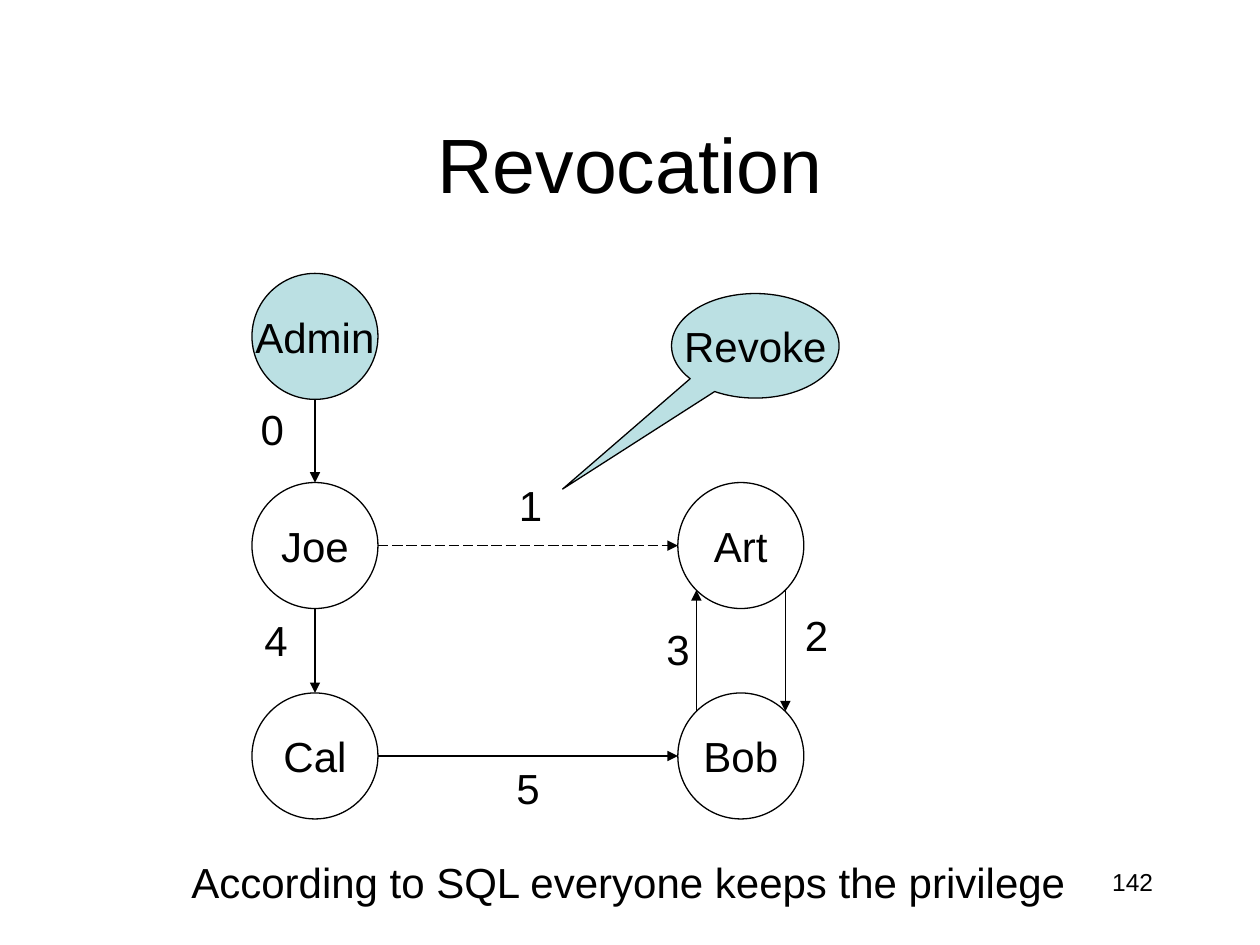
import math
from dataclasses import dataclass
from typing import Optional

from lxml import etree
from pptx import Presentation
from pptx.dml.color import RGBColor
from pptx.enum.dml import MSO_LINE
from pptx.enum.shapes import MSO_CONNECTOR, MSO_SHAPE
from pptx.enum.text import MSO_ANCHOR, MSO_AUTO_SIZE, PP_ALIGN
from pptx.oxml.ns import qn
from pptx.util import Inches, Pt

LONG_DASH = MSO_LINE.LONG_DASH
STRAIGHT = MSO_CONNECTOR.STRAIGHT
ELLIPSE = MSO_SHAPE.OVAL
CALLOUT = MSO_SHAPE.OVAL_CALLOUT
MIDDLE = MSO_ANCHOR.MIDDLE
FIT_TEXT = MSO_AUTO_SIZE.SHAPE_TO_FIT_TEXT
LEFT, CENTER, RIGHT = PP_ALIGN.LEFT, PP_ALIGN.CENTER, PP_ALIGN.RIGHT

COLORS = {"ink": "000000", "accent": "BBE0E3"}
FONT = "Arial"
BODY_SIZE = 24
DIAMETER = 1.0
LABEL_WIDTH, LABEL_HEIGHT = 0.39, 0.5
LEFT_COLUMN, RIGHT_COLUMN = 2.0, 5.38
TOP_ROW, MIDDLE_ROW, BOTTOM_ROW = 2.17, 3.83, 5.5


@dataclass
class Node:
    name: str
    left: float
    top: float
    fill: Optional[str] = None

    def rim(self, degrees: float) -> tuple[float, float]:
        """Point on the circle, clockwise from the right-hand side."""
        angle, radius = math.radians(degrees), DIAMETER / 2
        return (self.left + radius * (1 + math.cos(angle)),
                self.top + radius * (1 + math.sin(angle)))


@dataclass
class Grant:
    label: str
    source: str
    source_angle: float
    target: str
    target_angle: float
    label_left: float
    label_top: float
    revoked: bool = False


NODES = [
    Node("Admin", LEFT_COLUMN, TOP_ROW, "accent"),
    Node("Joe", LEFT_COLUMN, MIDDLE_ROW),
    Node("Art", RIGHT_COLUMN, MIDDLE_ROW),
    Node("Cal", LEFT_COLUMN, BOTTOM_ROW),
    Node("Bob", RIGHT_COLUMN, BOTTOM_ROW),
]

GRANTS = [
    Grant("0", "Admin", 90, "Joe", 270, 1.97, 3.15),
    Grant("1", "Joe", 0, "Art", 180, 4.02, 3.76, revoked=True),
    Grant("2", "Art", 45, "Bob", 315, 6.29, 4.79),
    Grant("3", "Bob", 225, "Art", 135, 5.19, 4.9),
    Grant("4", "Joe", 90, "Cal", 270, 2, 4.83),
    Grant("5", "Cal", 0, "Bob", 180, 4, 6),
]


def color(name: str) -> RGBColor:
    return RGBColor.from_string(COLORS[name])


def set_text(shape, text: str, size: float = BODY_SIZE, alignment=LEFT) -> None:
    shape.text_frame.text = text
    paragraph = shape.text_frame.paragraphs[0]
    paragraph.alignment = alignment
    paragraph.font.name = FONT
    paragraph.font.size = Pt(size)
    paragraph.font.color.rgb = color("ink")


def add_text(slide, text: str, left: float, top: float, width: float) -> None:
    box = slide.shapes.add_textbox(
        Inches(left), Inches(top), Inches(width), Inches(LABEL_HEIGHT))
    set_text(box, text)
    box.text_frame.word_wrap = False
    box.text_frame.auto_size = FIT_TEXT


def add_outlined(slide, preset, text: str, left: float, top: float,
                 width: float, height: float, fill: Optional[str]):
    shape = slide.shapes.add_shape(
        preset, Inches(left), Inches(top), Inches(width), Inches(height))
    shape.shadow.inherit = False
    if fill:
        shape.fill.solid()
        shape.fill.fore_color.rgb = color(fill)
    else:
        shape.fill.background()
    shape.line.color.rgb = color("ink")
    shape.line.width = Pt(0.75)
    set_text(shape, text, alignment=CENTER)
    shape.text_frame.word_wrap = False
    shape.text_frame.vertical_anchor = MIDDLE
    return shape


def add_arrow(slide, start: tuple[float, float], end: tuple[float, float],
              dashed: bool) -> None:
    arrow = slide.shapes.add_connector(
        STRAIGHT, *(Inches(value) for value in (*start, *end)))
    arrow.line.color.rgb = color("ink")
    arrow.line.width = Pt(0.75)
    if dashed:
        arrow.line.dash_style = LONG_DASH
    properties = arrow._element.spPr
    etree.SubElement(properties.find(qn("a:ln")), qn("a:tailEnd"), type="triangle")
    etree.SubElement(properties, qn("a:effectLst"))


def main() -> None:
    presentation = Presentation()
    presentation.slide_width = Inches(10)
    presentation.slide_height = Inches(7.5)
    slide = presentation.slides.add_slide(presentation.slide_layouts[5])

    # Title
    title = slide.shapes.title
    title.left, title.top = Inches(0.75), Inches(0.67)
    title.width, title.height = Inches(8.5), Inches(1.25)
    set_text(title, "Revocation", 44, CENTER)
    title.text_frame.vertical_anchor = MIDDLE

    # Slide number
    number = slide.shapes.add_textbox(
        Inches(7.17), Inches(6.83), Inches(2.08), Inches(0.5))
    set_text(number, "142", 14, RIGHT)
    number.text_frame.word_wrap = True

    # Users
    for node in NODES:
        add_outlined(slide, ELLIPSE, node.name, node.left, node.top,
                     DIAMETER, DIAMETER, node.fill)

    # Grants between users, numbered in order
    users = {node.name: node for node in NODES}
    for grant in GRANTS:
        add_arrow(slide, users[grant.source].rim(grant.source_angle),
                  users[grant.target].rim(grant.target_angle), grant.revoked)
        add_text(slide, grant.label, grant.label_left, grant.label_top, LABEL_WIDTH)

    # Callout on the revoked grant
    callout = add_outlined(slide, CALLOUT, "Revoke", 5.33, 2.33, 1.33, 0.83, "accent")
    callout.adjustments[0] = -1.15
    callout.adjustments[1] = 1.37

    # Conclusion
    add_text(slide, "According to SQL everyone keeps the privilege", 1.42, 6.75, 7.22)

    presentation.save("out.pptx")


if __name__ == "__main__":
    main()
